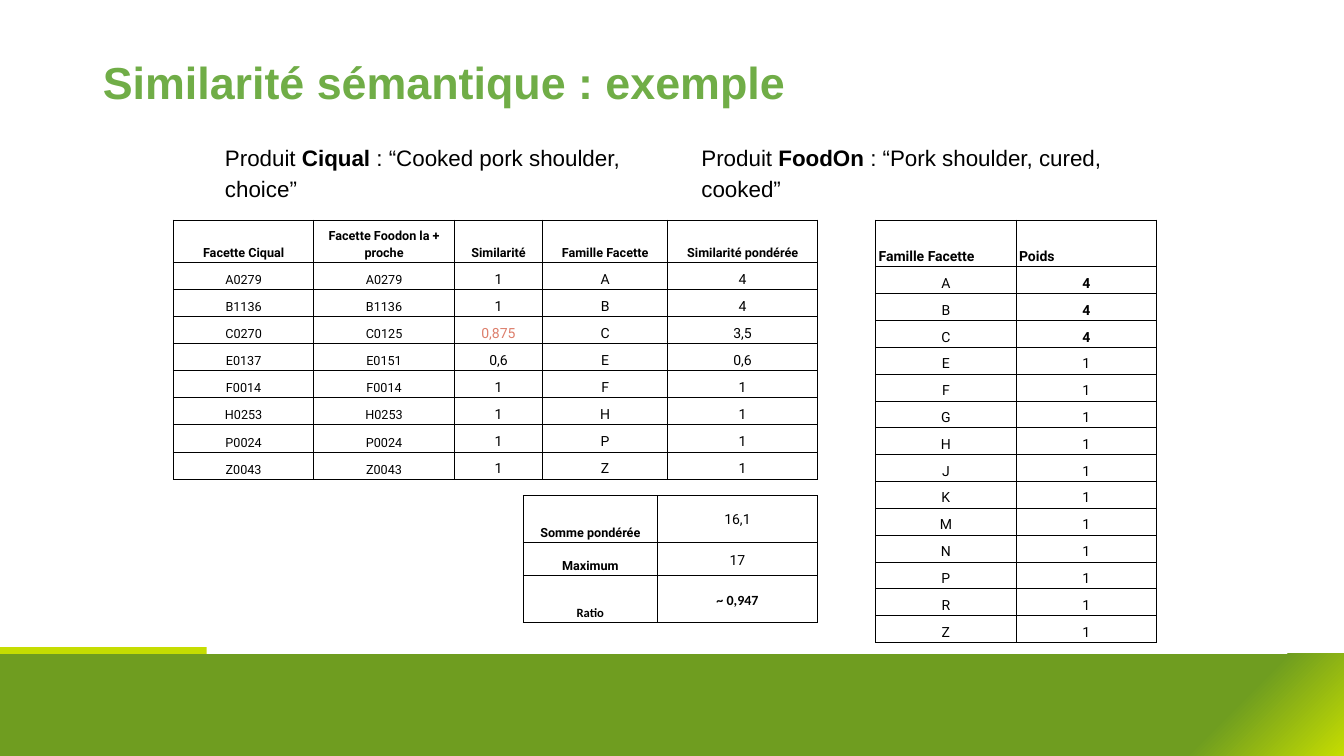
from pptx import Presentation
from pptx.dml.color import RGBColor
from pptx.enum.shapes import MSO_SHAPE as Shape
from pptx.enum.text import MSO_ANCHOR as Anchor, MSO_AUTO_SIZE as AutoSize, PP_ALIGN as Align
from pptx.oxml import parse_xml
from pptx.oxml.ns import nsdecls
from pptx.util import Inches, Pt

COLORS = {
    "green": "6F9D20",
    "lime": "C5DD01",
    "title": "70AD47",
    "text": "000000",
    "alert": "DD7E6B",
}


class Deck:
    def __init__(self, prs, layout):
        self.prs = prs
        self.s = prs.slides.add_slide(prs.slide_layouts[layout])

    def x(self, share):
        return round(self.prs.slide_width * share / 100)

    def y(self, share):
        return round(self.prs.slide_height * share / 100)

    def box(self, left, top, width, height):
        return self.x(left), self.y(top), self.x(width), self.y(height)

    def font(self, run, size, name="Arial", color="text", bold=False):
        run.font.size = Pt(size)
        run.font.name = name
        run.font.bold = bold
        run.font.color.rgb = RGBColor.from_string(COLORS[color])

    def rect(self, area, color=None):
        sp = self.s.shapes.add_shape(Shape.RECTANGLE, *self.box(*area))
        sp.shadow.inherit = False
        sp.line.fill.background()
        if color:
            sp.fill.solid()
            sp.fill.fore_color.rgb = RGBColor.from_string(COLORS[color])
        return sp

    def glow(self, area, stops):
        sp = self.rect(area)
        gs = "".join(
            f'<a:gs pos="{pos * 1000}"><a:srgbClr val="{COLORS[color]}"/></a:gs>'
            for pos, color in stops
        )
        sp._element.spPr.insert(2, parse_xml(
            f'<a:gradFill {nsdecls("a")} rotWithShape="1"><a:gsLst>{gs}</a:gsLst>'
            '<a:path path="circle"><a:fillToRect l="100000" t="100000"/></a:path></a:gradFill>'
        ))

    def title(self, area, text):
        sp = self.s.shapes.title
        sp.left, sp.top, sp.width, sp.height = self.box(*area)
        tf = sp.text_frame
        tf.text = text
        tf.word_wrap = True
        tf.auto_size = AutoSize.NONE
        tf.vertical_anchor = Anchor.MIDDLE
        p = tf.paragraphs[0]
        p.alignment = Align.LEFT
        p.line_spacing = 0.9
        self.font(p.runs[0], 32, color="title", bold=True)

    def text(self, area, parts):
        tf = self.s.shapes.add_textbox(*self.box(*area)).text_frame
        tf.word_wrap = True
        tf.margin_left = tf.margin_right = tf.margin_top = tf.margin_bottom = Inches(0.1)
        p = tf.paragraphs[0]
        p.line_spacing = 1.15
        for text, bold in parts:
            r = p.add_run()
            r.text = text
            self.font(r, 16, bold=bold)

    def border(self, cell):
        tcPr = cell._tc.get_or_add_tcPr()
        for side in ("lnL", "lnR", "lnT", "lnB"):
            tcPr.append(parse_xml(
                f'<a:{side} {nsdecls("a")} w="{Pt(0.75)}"><a:solidFill>'
                f'<a:srgbClr val="{COLORS["text"]}"/></a:solidFill></a:{side}>'
            ))
        cell.fill.background()

    def table(self, left, top, cols, heights, rows, style):
        area = self.box(left, top, sum(cols), sum(heights))
        tbl = self.s.shapes.add_table(len(rows), len(cols), *area).table
        tbl.first_row = tbl.horz_banding = False
        for col, width in zip(tbl.columns, cols):
            col.width = self.x(width)
        for i, (row, height) in enumerate(zip(rows, heights)):
            tbl.rows[i].height = self.y(height)
            for j, text in enumerate(row):
                cell = tbl.cell(i, j)
                self.border(cell)
                cell.margin_left = cell.margin_right = Inches(0.03)
                cell.margin_top = cell.margin_bottom = Inches(0.02)
                look = {"size": 10, "name": "Roboto", **style(i, j, text)}
                cell.vertical_anchor = look.pop("anchor", Anchor.BOTTOM)
                p = cell.text_frame.paragraphs[0]
                p.text = text
                p.alignment = look.pop("align", Align.CENTER)
                p.line_spacing = 1.15
                self.font(p.runs[0], **look)


def facet_style(i, j, text):
    return {
        "size": 9 if i == 0 or j < 2 else 10,
        "bold": i == 0,
        "color": "alert" if text == "0,875" else "text",
    }


def weight_style(i, j, text):
    return {
        "bold": i == 0 or text == "4",
        "align": Align.LEFT if i == 0 else Align.CENTER,
    }


def summary_style(i, j, text):
    return {
        "size": 10 if j else 9,
        "name": "Calibri" if i == 2 else "Roboto",
        "bold": j == 0 or i == 2,
        "anchor": Anchor.MIDDLE if j else Anchor.BOTTOM,
    }


def main():
    prs = Presentation()
    prs.slide_width, prs.slide_height = Inches(13.33), Inches(7.5)
    deck = Deck(prs, 5)

    deck.glow((0, 86.5, 100, 13.5), [(0, "lime"), (11, "green"), (100, "green")])
    deck.rect((0, 85.6, 15.38, 0.9), "lime")
    deck.title((6.9, 5.33, 86.25, 11.87), "Similarité sémantique : exemple")

    products = [
        (16, "Ciqual", "Cooked pork shoulder, choice"),
        (51.45, "FoodOn", "Pork shoulder, cured, cooked"),
    ]
    for left, base, product in products:
        parts = [("Produit ", False), (base, True), (f" : “{product}”", False)]
        deck.text((left, 17.2, 33.3, 6.93), parts)

    facets = [
        ("Facette Ciqual", "Facette Foodon la + proche", "Similarité",
         "Famille Facette", "Similarité pondérée"),
        ("A0279", "A0279", "1", "A", "4"),
        ("B1136", "B1136", "1", "B", "4"),
        ("C0270", "C0125", "0,875", "C", "3,5"),
        ("E0137", "E0151", "0,6", "E", "0,6"),
        ("F0014", "F0014", "1", "F", "1"),
        ("H0253", "H0253", "1", "H", "1"),
        ("P0024", "P0024", "1", "P", "1"),
        ("Z0043", "Z0043", "1", "Z", "1"),
    ]
    deck.table(12.9, 29.1, [10.45, 10.45, 6.58, 9.3, 11.16],
               [5.6] + [3.59] * 8, facets, facet_style)

    weights = [("Famille Facette", "Poids")]
    weights += [(family, "4" if family in "ABC" else "1") for family in "ABCEFGHJKMNPRZ"]
    deck.table(65.15, 29.1, [10.45] * 2, [6.2] + [3.55] * 14, weights, weight_style)

    summary = [("Somme pondérée", "16,1"), ("Maximum", "17"), ("Ratio", "~ 0,947")]
    deck.table(38.94, 65.55, [9.97, 11.93], [6.2, 4.4, 6.2], summary, summary_style)

    prs.save("out.pptx")


if __name__ == "__main__":
    main()
